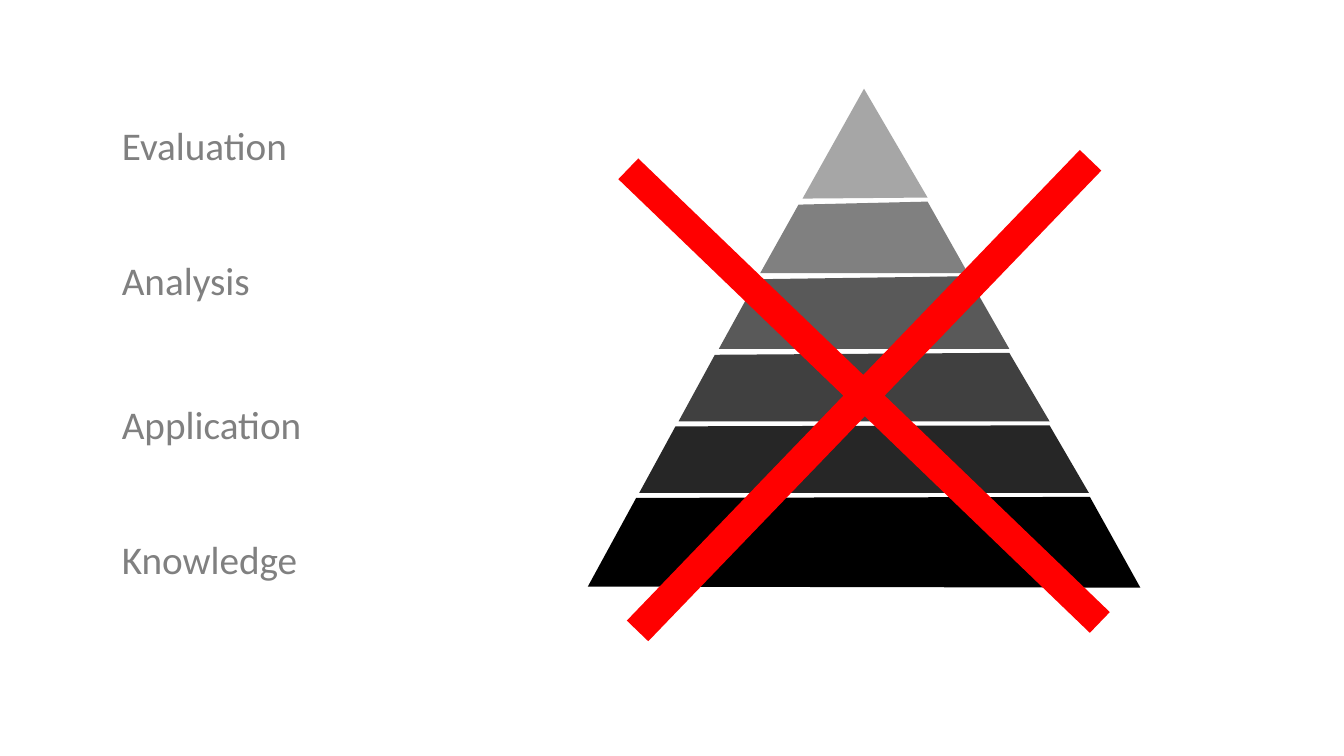
"""Build a slide that crosses out a pyramid of learning levels."""
from dataclasses import dataclass

from pptx import Presentation
from pptx.dml.color import RGBColor
from pptx.enum import shapes, text
from pptx.shapes.autoshape import Shape
from pptx.shapes.shapetree import GroupShapes, SlideShapes
from pptx.util import Inches, Pt

BLACK = RGBColor(0x00, 0x00, 0x00)
CHARCOAL = RGBColor(0x26, 0x26, 0x26)
DARK_GRAY = RGBColor(0x40, 0x40, 0x40)
SLATE_GRAY = RGBColor(0x59, 0x59, 0x59)
MID_GRAY = RGBColor(0x80, 0x80, 0x80)
LIGHT_GRAY = RGBColor(0xA6, 0xA6, 0xA6)
RED = RGBColor(0xFF, 0x00, 0x00)


@dataclass(frozen=True)
class Label:
    wording: str
    top: float


@dataclass(frozen=True)
class Tier:
    color: RGBColor
    corners: tuple[tuple[float, float], ...]


LABELS = (
    Label("Evaluation", 1.15),
    Label("Analysis", 2.49),
    Label("Application", 3.92),
    Label("Knowledge", 5.26),
)

TIERS = (
    Tier(BLACK, ((5.83, 5.82), (11.31, 5.83), (10.81, 4.93), (6.31, 4.94))),
    Tier(CHARCOAL, ((6.34, 4.89), (10.8, 4.89), (10.41, 4.22), (6.7, 4.23))),
    Tier(DARK_GRAY, ((6.73, 4.18), (10.41, 4.18), (10.01, 3.5), (7.09, 3.52))),
    Tier(SLATE_GRAY, ((7.13, 3.46), (10.01, 3.46), (9.6, 2.74), (7.51, 2.77))),
    Tier(MID_GRAY, ((7.54, 2.71), (9.6, 2.71), (9.2, 2.0), (7.92, 2.03))),
    Tier(LIGHT_GRAY, ((7.96, 1.97), (9.2, 1.96), (8.57, 0.88))),
)


def paint(shape: Shape, color: RGBColor) -> None:
    shape.shadow.inherit = False
    shape.fill.solid()
    shape.fill.fore_color.rgb = color
    shape.line.fill.background()


def add_label(slide_shapes: SlideShapes, label: Label) -> None:
    box = slide_shapes.add_textbox(Inches(1.11), Inches(label.top), Inches(5.09), Inches(0.57))
    frame = box.text_frame
    frame.word_wrap = True
    frame.auto_size = text.MSO_AUTO_SIZE.SHAPE_TO_FIT_TEXT
    run = frame.paragraphs[0].add_run()
    run.text = label.wording
    run.font.name = "Calibri"
    run.font.size = Pt(28)
    run.font.color.rgb = MID_GRAY


def add_tier(pyramid_shapes: GroupShapes, tier: Tier) -> None:
    first, *others = [(Inches(x), Inches(y)) for x, y in tier.corners]
    builder = pyramid_shapes.build_freeform(*first)
    builder.add_line_segments(others, close=True)
    paint(builder.convert_to_shape(), tier.color)


def add_cross(slide_shapes: SlideShapes) -> None:
    cross = slide_shapes.add_shape(
        shapes.MSO_SHAPE.CROSS, Inches(5.33), Inches(0.68), Inches(6.48), Inches(6.49)
    )
    cross.adjustments[0] = 0.478
    cross.rotation = 313.9
    paint(cross, RED)


def main() -> None:
    presentation = Presentation()
    presentation.slide_width = Inches(13.33)
    presentation.slide_height = Inches(7.5)
    slide = presentation.slides.add_slide(presentation.slide_layouts.get_by_name("Blank"))
    for label in LABELS:
        add_label(slide.shapes, label)
    pyramid = slide.shapes.add_group_shape()
    for tier in TIERS:
        add_tier(pyramid.shapes, tier)
    add_cross(slide.shapes)
    presentation.save("out.pptx")


if __name__ == "__main__":
    main()
